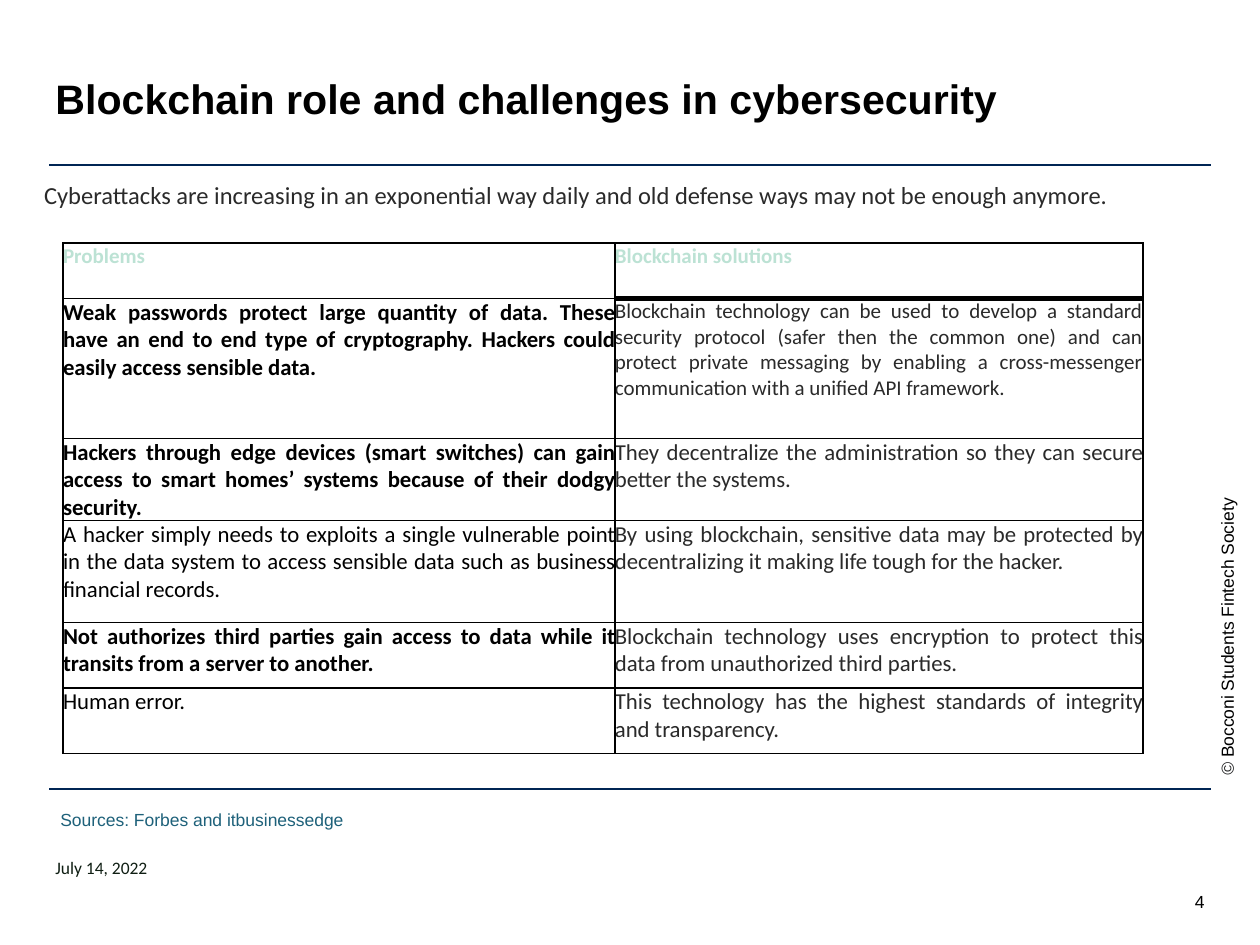
"""Build the slide on blockchain's role and challenges in cybersecurity."""
from lxml.etree import SubElement
from pptx import Presentation
from pptx.dml.color import RGBColor
from pptx.enum.text import MSO_ANCHOR as Anchor, MSO_AUTO_SIZE as AutoSize, PP_ALIGN as Align
from pptx.enum.shapes import MSO_CONNECTOR as Connector
from pptx.oxml import parse_xml
from pptx.oxml.ns import nsdecls, qn
from pptx.util import Inches, Pt

BLACK = RGBColor(0x00, 0x00, 0x00)
WHITE = RGBColor(0xFF, 0xFF, 0xFF)
NAVY = RGBColor(0x00, 0x25, 0x54)
TEAL = RGBColor(0x1E, 0x61, 0x7A)
MINT = RGBColor(0xBC, 0xE2, 0xD4)
CHARCOAL = RGBColor(0x2A, 0x2A, 0x2A)
INK = RGBColor(0x20, 0x21, 0x22)
FOREST = RGBColor(0x0F, 0x1E, 0x13)

SLIDE_WIDTH, SLIDE_HEIGHT = Inches(10), Inches(7.5)
COLUMNS, ROWS = 100, 75
MARGIN, CONTENT = 3.9, 92.2
COLUMN_WIDTHS = (43.8, 41.9)
ROW_HEIGHTS = (4.4, 11.1, 5.9, 8.1, 5.2, 5.2)

HEADINGS = ("Problems", "Blockchain solutions")
ENTRIES = (
    ("Weak passwords protect large quantity of data. These have an end to end type of "
     "cryptography. Hackers could easily access sensible data. ", True,
     "Blockchain technology can be used to develop a standard security protocol (safer then "
     "the common one) and can protect private messaging by enabling a cross-messenger "
     "communication with a unified API framework.", 12),
    ("Hackers through edge devices (smart switches) can gain access to smart homes’ systems "
     "because of their dodgy security.", True,
     "They decentralize the administration so they can secure better the systems.", 13),
    ("A hacker simply needs to exploits a single vulnerable point in the data system to access "
     "sensible data such as business financial records.", False,
     "By using blockchain, sensitive data may be protected by decentralizing it making life "
     "tough for the hacker.", 13),
    ("Not authorizes third parties gain access to data while it transits from a server to "
     "another.", True,
     "Blockchain technology uses encryption to protect this data from unauthorized third "
     "parties.", 13),
    ("Human error.", False,
     "This technology has the highest standards of integrity and transparency.", 13),
)


def across(columns):
    """Return the length of a number of grid columns."""
    return round(SLIDE_WIDTH * columns / COLUMNS)


def down(rows):
    """Return the length of a number of grid rows."""
    return round(SLIDE_HEIGHT * rows / ROWS)


def write(para, text, size=10, font="Arial", color=BLACK, bold=False, italic=False,
          align=None, spacing=None):
    """Add a formatted span of text to a paragraph."""
    if align is not None:
        para.alignment = align
    if spacing is not None:
        para.line_spacing = spacing
    span = para.add_run()
    span.text = text
    span.font.size, span.font.name = Pt(size), font
    span.font.bold, span.font.italic = bold, italic
    span.font.color.rgb = color


def add_box(page, left, top, width, height, wrap=True, grow=False, anchor=Anchor.TOP):
    """Add a text box placed in grid units."""
    box = page.shapes.add_textbox(across(left), down(top), across(width), down(height))
    frame = box.text_frame
    frame.margin_left = frame.margin_right = Inches(0.05)
    frame.margin_top = frame.margin_bottom = Inches(0.05)
    frame.word_wrap, frame.vertical_anchor = wrap, anchor
    frame.auto_size = AutoSize.SHAPE_TO_FIT_TEXT if grow else AutoSize.NONE
    return box


def add_label(page, place, text, wrap=True, grow=False, anchor=Anchor.TOP, **style):
    """Add a text box holding one formatted paragraph."""
    box = add_box(page, *place, wrap=wrap, grow=grow, anchor=anchor)
    write(box.text_frame.paragraphs[0], text, **style)


def add_rule(page, top):
    """Draw a horizontal rule across the content width."""
    rule = page.shapes.add_connector(Connector.STRAIGHT, across(MARGIN), down(top),
                                     across(MARGIN + CONTENT), down(top))
    rule.line.color.rgb, rule.line.width = NAVY, Pt(1)
    SubElement(rule._element.spPr, qn("a:effectLst"))


def set_borders(cell, **widths):
    """Give a cell black borders, one point wide unless a side says otherwise."""
    properties = cell._tc.get_or_add_tcPr()
    for index, side in enumerate("LRTB"):
        properties.insert(index, parse_xml(
            f'<a:ln{side} {nsdecls("a")} w="{Pt(widths.get(side, 1))}"><a:solidFill>'
            f'<a:srgbClr val="{BLACK}"/></a:solidFill></a:ln{side}>'))


def fill_cell(cell, text, borders, **style):
    """Write and style one table cell."""
    cell.margin_left = cell.margin_right = cell.margin_top = cell.margin_bottom = 0
    cell.fill.solid()
    cell.fill.fore_color.rgb = WHITE
    set_borders(cell, **borders)
    write(cell.text_frame.paragraphs[0], text, font="Calibri", **style)


def add_comparison(page):
    """Add the table of problems and blockchain solutions."""
    table = page.shapes.add_table(len(ROW_HEIGHTS), len(COLUMN_WIDTHS), across(5), down(19.3),
                                  across(sum(COLUMN_WIDTHS)), down(sum(ROW_HEIGHTS))).table
    table.first_row = table.horz_banding = False
    for column, width in zip(table.columns, COLUMN_WIDTHS):
        column.width = across(width)
    for row, height in zip(table.rows, ROW_HEIGHTS):
        row.height = down(height)
    for index, heading in enumerate(HEADINGS):
        fill_cell(table.cell(0, index), heading, {"B": 3} if index else {},
                  size=12, color=MINT, bold=True)
    for index, (problem, bold, solution, size) in enumerate(ENTRIES, 1):
        fill_cell(table.cell(index, 0), problem, {}, size=13, bold=bold, align=Align.JUSTIFY)
        fill_cell(table.cell(index, 1), solution, {"T": 3} if index == 1 else {},
                  size=size, color=CHARCOAL, align=Align.JUSTIFY)


def add_copyright(page):
    """Add the copyright line that runs up the right edge."""
    box = add_box(page, 85.7, 49.2, 23.2, 2.5, wrap=False, grow=True)
    box.rotation = 270
    para = box.text_frame.paragraphs[0]
    write(para, "© ", color=INK, italic=True)
    write(para, "Bocconi Students Fintech Society")


def main():
    """Build and save the deck."""
    deck = Presentation()
    deck.slide_width, deck.slide_height = SLIDE_WIDTH, SLIDE_HEIGHT
    page = deck.slides.add_slide(deck.slide_layouts[6])
    for top in (13.1, 62.6):
        add_rule(page, top)
    add_copyright(page)
    add_label(page, (MARGIN, 4, CONTENT, 8.1), "Blockchain role and challenges in cybersecurity",
              anchor=Anchor.MIDDLE, size=23.5, bold=True, spacing=0.9)
    add_label(page, (94.2, 70.3, 1.9, 2.5), "4", wrap=False, grow=True,
              anchor=Anchor.MIDDLE, align=Align.RIGHT)
    add_label(page, (MARGIN, 63.9, CONTENT, 4.7), " Sources: Forbes and itbusinessedge",
              color=TEAL, spacing=0.9)
    add_comparison(page)
    add_label(page, (3, 13.8, 95.7, 3.4),
              "Cyberattacks are increasing in an exponential way daily and old defense ways "
              "may not be enough anymore.", grow=True, size=14, font="Calibri", color=CHARCOAL)
    add_label(page, (MARGIN, 67.5, 30, 2.7), "July 14, 2022", grow=True,
              font="Calibri", color=FOREST)
    deck.save("out.pptx")


if __name__ == "__main__":
    main()
